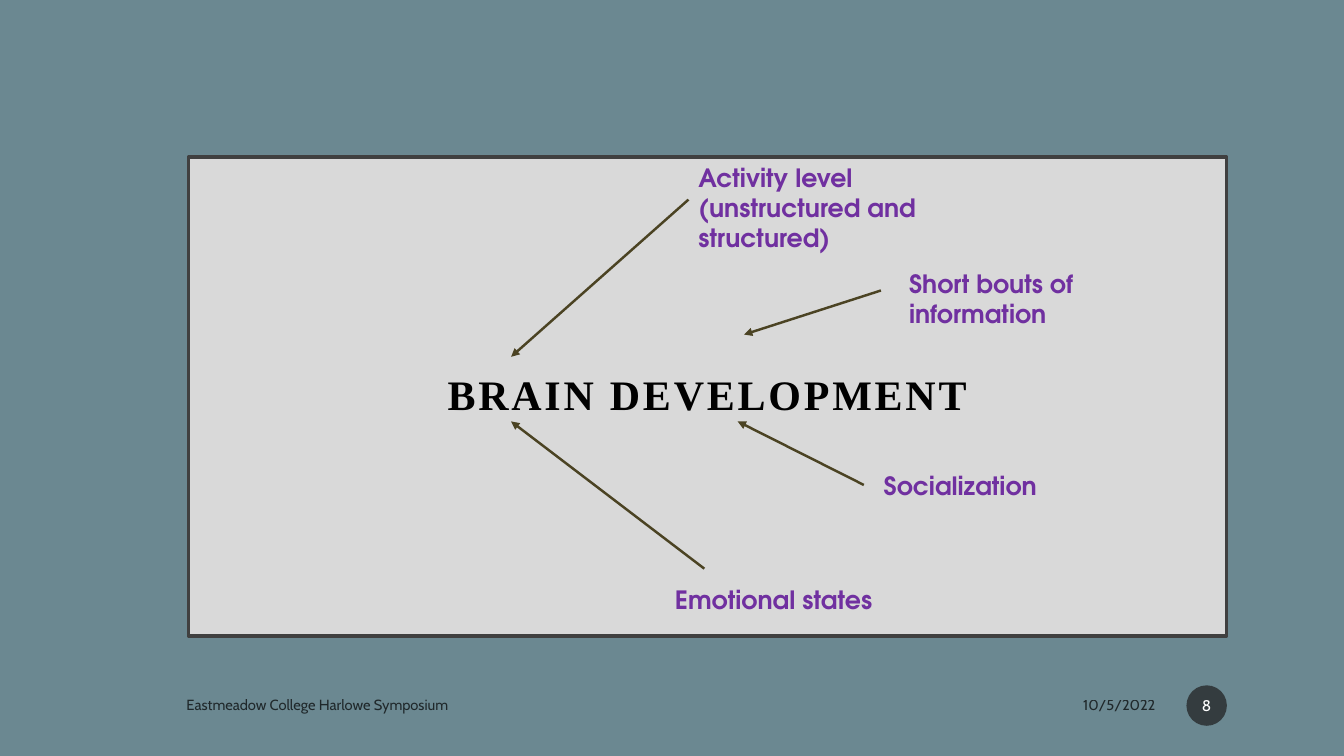
import pptx
import pptx.util
import pptx.dml.color
import pptx.enum.shapes
import pptx.enum.text
import pptx.oxml
import pptx.oxml.ns
from pptx.util import Cm

ALIGN = pptx.enum.text.PP_ALIGN
ANCHOR = pptx.enum.text.MSO_ANCHOR
SHAPE = pptx.enum.shapes.MSO_SHAPE


def paint(fill, color, element=None, opacity=100):
    """Fill with a hex colour; below full opacity, set alpha on the colour in element."""
    fill.solid()
    fill.fore_color.rgb = pptx.dml.color.RGBColor.from_string(color)
    if opacity < 100:
        tone = next(element.iter(pptx.oxml.ns.qn("a:srgbClr")))
        alpha = pptx.oxml.parse_xml(f'<a:alpha {pptx.oxml.ns.nsdecls("a")}/>')
        alpha.set("val", str(opacity * 1000))
        tone.append(alpha)


def write(box, text, size, font, color, align=ALIGN.LEFT, anchor=ANCHOR.MIDDLE, bold=False, opacity=100):
    frame = box.text_frame
    frame.word_wrap = True
    frame.vertical_anchor = anchor
    frame.text = text
    para = frame.paragraphs[0]
    para.alignment = align
    span = para.runs[0]
    span.font.size = pptx.util.Pt(size)
    span.font.name = font
    span.font.bold = bold
    paint(span.font.fill, color, span._r, opacity)
    return para


deck = pptx.Presentation()
deck.slide_width, deck.slide_height = Cm(33.87), Cm(19.05)
page = deck.slides.add_slide(deck.slide_layouts[6])
paint(page.background.fill, "6B8891")

# Central panel with the topic
panel = page.shapes.add_shape(SHAPE.RECTANGLE, Cm(4.75), Cm(3.96), Cm(26.16), Cm(12.07))
panel.shadow.inherit = False
paint(panel.fill, "D9D9D9")
paint(panel.line.fill, "404040")
panel.line.width = pptx.util.Pt(2.5)
topic = write(panel, "BRAIN DEVELOPMENT", 30, "Times New Roman", "000000", ALIGN.CENTER, bold=True)
topic.line_spacing = 0.9
topic.runs[0]._r.get_or_add_rPr().set("spc", "200")

# Arrows pointing at the topic
arrows = [
    (17.35, 5.03, 12.88, 8.99),
    (21.77, 12.22, 18.59, 10.62),
    (17.75, 14.33, 12.88, 10.62),
    (22.2, 7.32, 18.75, 8.43),
]
for ends in arrows:
    arrow = page.shapes.add_connector(
        pptx.enum.shapes.MSO_CONNECTOR.STRAIGHT, *[Cm(value) for value in ends])
    paint(arrow.line.fill, "4B4323")
    arrow.line.width = pptx.util.Pt(1.75)
    namespace = pptx.oxml.ns.nsdecls("a")
    arrow.line._get_or_add_ln().append(
        pptx.oxml.parse_xml(f'<a:tailEnd {namespace} type="triangle"/>'))
    arrow._element.spPr.append(pptx.oxml.parse_xml(f"<a:effectLst {namespace}/>"))

# Influences around the topic
influences = [
    ("Activity level (unstructured and structured)", 17.35, 3.96, 6.1, 2.57),
    ("Socialization", 22.02, 11.73, 4.95, 1.02),
    ("Emotional states", 16.76, 14.6, 6.1, 1.02),
    ("Short bouts of information", 22.66, 6.63, 4.95, 1.8),
]
for text, *place in influences:
    label = page.shapes.add_textbox(*[Cm(value) for value in place])
    write(label, text, 18, "TeX Gyre Adventor", "7030A0", anchor=ANCHOR.TOP, bold=True)

# Footer
footers = [
    ("10/5/2022", 21.72, 7.65, ALIGN.RIGHT),
    ("Eastmeadow College Harlowe Symposium", 4.45, 16.38, ALIGN.LEFT),
]
for text, left, width, align in footers:
    footer = page.shapes.add_textbox(Cm(left), Cm(17.32), Cm(width), Cm(0.89))
    write(footer, text, 10.5, "Cabin", "000000", align, opacity=70)

badge = page.shapes.add_shape(SHAPE.OVAL, Cm(29.9), Cm(17.27), Cm(1.02), Cm(1.02))
badge.shadow.inherit = False
paint(badge.fill, "1D1D1D", badge._element.spPr, 70)
badge.line.fill.background()
write(badge, "8", 11, "Cabin", "FFFFFF", ALIGN.CENTER)
badge.text_frame.margin_left = badge.text_frame.margin_right = Cm(0.05)

for side in ("left", "top", "right", "bottom"):
    setattr(panel.text_frame, f"margin_{side}", Cm(0.5))

deck.save("out.pptx")
